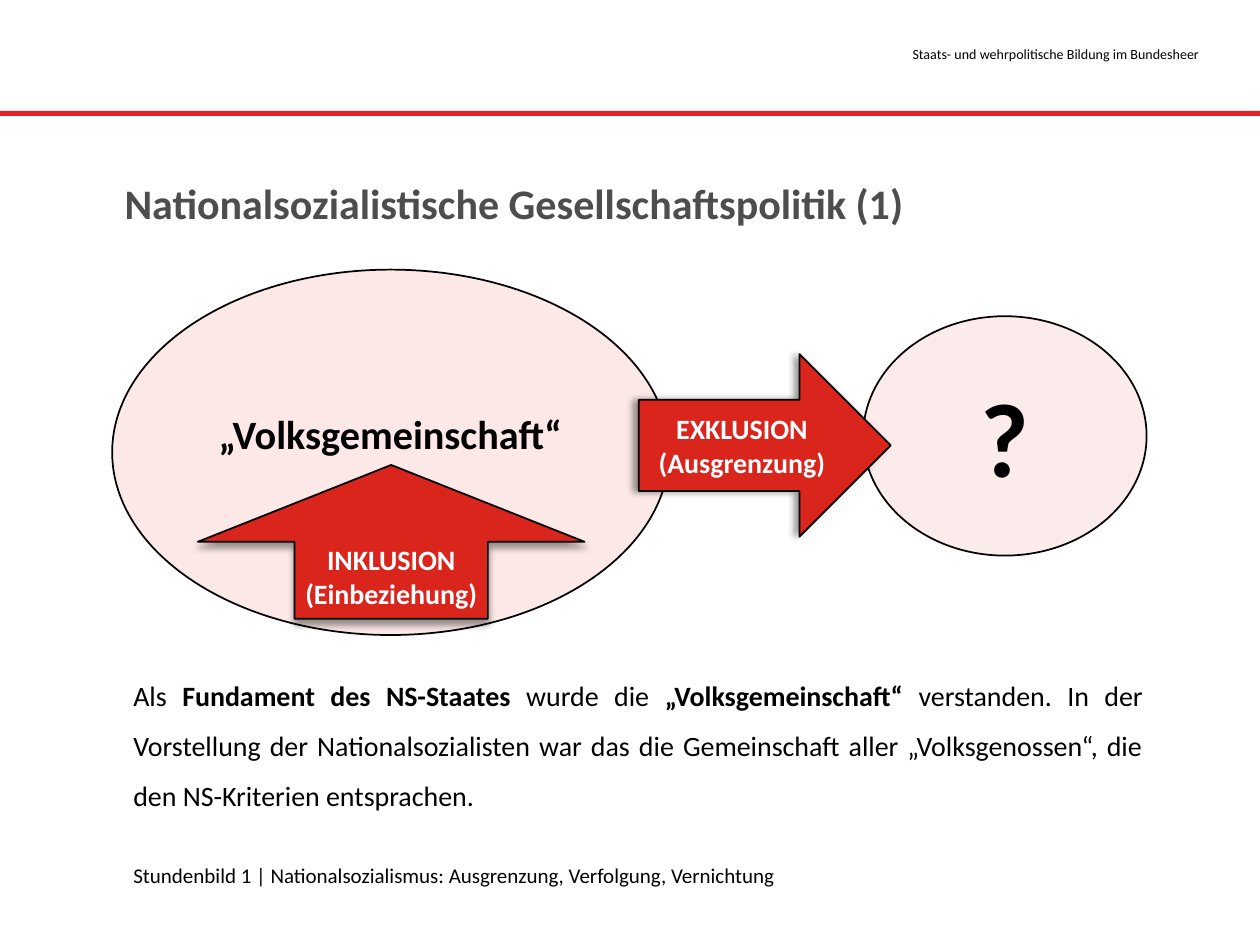
"""Build the slide on inclusion and exclusion in Nazi social policy."""
from lxml.etree import SubElement
from pptx import Presentation
from pptx.dml.color import RGBColor
from pptx.enum.shapes import MSO_SHAPE
from pptx.enum.text import MSO_ANCHOR, MSO_AUTO_SIZE, PP_ALIGN
from pptx.oxml.ns import qn
from pptx.util import Inches, Pt

COLORS = {
    "black": "000000",
    "white": "FFFFFF",
    "heading": "4D4D4D",
    "rule": "E12323",
    "red": "DA251D",
}
FONT = "Calibri"


def rgb(color):
    return RGBColor.from_string(COLORS[color])


def apply_format(target, values):
    for attribute, value in values.items():
        setattr(target, attribute, value)


def write(frame, paragraphs, size, color="black", bold=False, **layout):
    """Fill a text frame with paragraphs, each a list of (text, bold) runs or a string."""
    for index, content in enumerate(paragraphs):
        paragraph = frame.paragraphs[0] if index == 0 else frame.add_paragraph()
        apply_format(paragraph, layout)
        runs = [(content, bold)] if isinstance(content, str) else content
        for text, run_bold in runs:
            run = paragraph.add_run()
            run.text = text
            apply_format(run.font, {"name": FONT, "size": Pt(size), "bold": run_bold})
            run.font.color.rgb = rgb(color)


def add_text(slide, box, paragraphs, size, **style):
    frame = slide.shapes.add_textbox(*map(Inches, box)).text_frame
    apply_format(frame, {"word_wrap": True, "auto_size": MSO_AUTO_SIZE.SHAPE_TO_FIT_TEXT})
    write(frame, paragraphs, size, **style)


def add_figure(slide, kind, box, fill="red", outlined=True):
    figure = slide.shapes.add_shape(kind, *map(Inches, box))
    figure.shadow.inherit = False
    figure.fill.solid()
    figure.fill.fore_color.rgb = rgb(fill)
    if outlined:
        figure.line.color.rgb = rgb("black")
        figure.line.width = Pt(1)
    else:
        figure.line.fill.background()
    apply_format(figure.text_frame, {"word_wrap": True, "vertical_anchor": MSO_ANCHOR.MIDDLE})
    return figure


def add_group_ellipse(slide, box, opacity, label, size):
    """Add a translucent ellipse that stands for a social group."""
    ellipse = add_figure(slide, MSO_SHAPE.OVAL, box)
    tint = ellipse.fill._xPr.find(f"{qn('a:solidFill')}/{qn('a:srgbClr')}")
    SubElement(tint, qn("a:alpha"), val=str(opacity * 1000))
    write(ellipse.text_frame, [label], size, bold=True, alignment=PP_ALIGN.CENTER)
    return ellipse


def add_process_arrow(slide, kind, box, shadow_angle):
    """Add a red block arrow with a soft outer shadow."""
    arrow = add_figure(slide, kind, box)
    effects = arrow._element.spPr.find(qn("a:effectLst"))
    shadow = SubElement(
        effects, qn("a:outerShdw"), blurRad=str(Pt(4)), dist=str(Pt(3)),
        dir=str(shadow_angle * 60000), algn="ctr", rotWithShape="0",
    )
    shade = SubElement(shadow, qn("a:srgbClr"), val=COLORS["black"])
    SubElement(shade, qn("a:alpha"), val="40000")
    return arrow


def main():
    presentation = Presentation()
    apply_format(presentation, {"slide_width": Inches(10), "slide_height": Inches(7.5)})
    slide = presentation.slides.add_slide(presentation.slide_layouts[6])
    arrow_label = {"color": "white", "bold": True, "alignment": PP_ALIGN.CENTER}

    add_text(slide, (5.52, 0.31, 4.1, 0.24),
             ["Staats- und wehrpolitische Bildung im Bundesheer"], 8, alignment=PP_ALIGN.RIGHT)
    add_figure(slide, MSO_SHAPE.RECTANGLE, (0, 0.88, 10, 0.04), "rule", outlined=False)

    community = add_group_ellipse(slide, (0.89, 2.14, 4.42, 2.9), 10, "„Volksgemeinschaft“", 23)
    community.text_frame.margin_bottom = Inches(0.35)
    add_text(slide, (0.89, 1.36, 8.21, 0.5),
             ["Nationalsozialistische Gesellschaftspolitik (1)"], 24, color="heading", bold=True)
    add_process_arrow(slide, MSO_SHAPE.UP_ARROW, (1.57, 3.69, 3.07, 1.22), 90)
    add_group_ellipse(slide, (6.85, 2.51, 2.25, 1.9), 9, "?", 60)
    exclusion = add_process_arrow(slide, MSO_SHAPE.RIGHT_ARROW, (5.07, 2.81, 2, 1.45), 180)
    write(exclusion.text_frame, ["EXKLUSION (Ausgrenzung)"], 16, **arrow_label)
    add_text(slide, (2.27, 4.26, 1.67, 0.64), ["INKLUSION", "(Einbeziehung)"], 16, **arrow_label)

    add_text(slide, (0.96, 6.8, 8.21, 0.3),
             ["Stundenbild 1 | Nationalsozialismus: Ausgrenzung, Verfolgung, Vernichtung"], 12)
    explanation = [
        ("Als ", False),
        ("Fundament des NS-Staates ", True),
        ("wurde die ", False),
        ("„Volksgemeinschaft“ ", True),
        ("verstanden. In der Vorstellung der Nationalsozialisten war das die Gemeinschaft "
         "aller „Volksgenossen“, die den NS-Kriterien entsprachen.", False),
    ]
    add_text(slide, (0.96, 5.2, 8.21, 1.27), [explanation], 16,
             alignment=PP_ALIGN.JUSTIFY, line_spacing=1.5)

    presentation.save("out.pptx")


if __name__ == "__main__":
    main()
